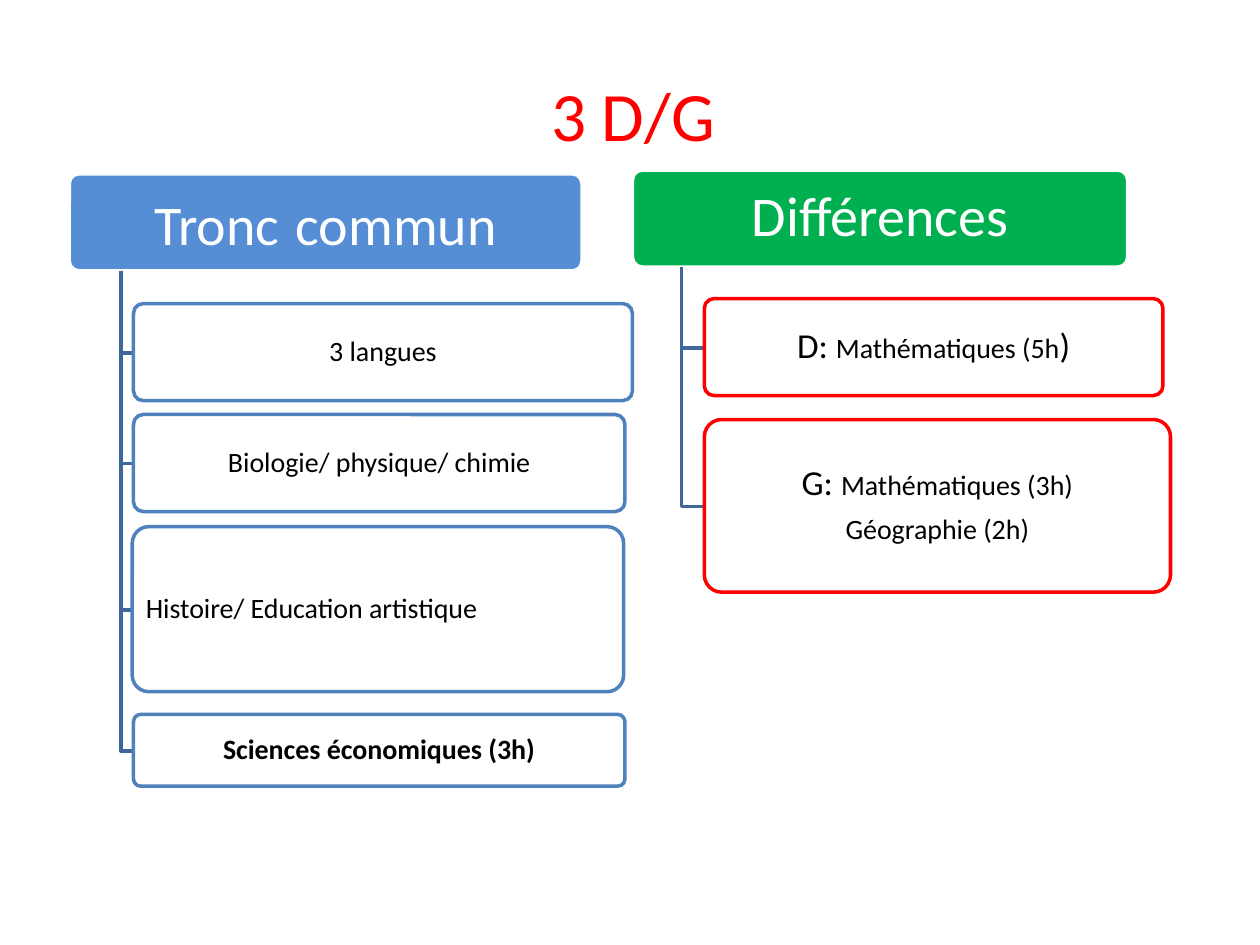
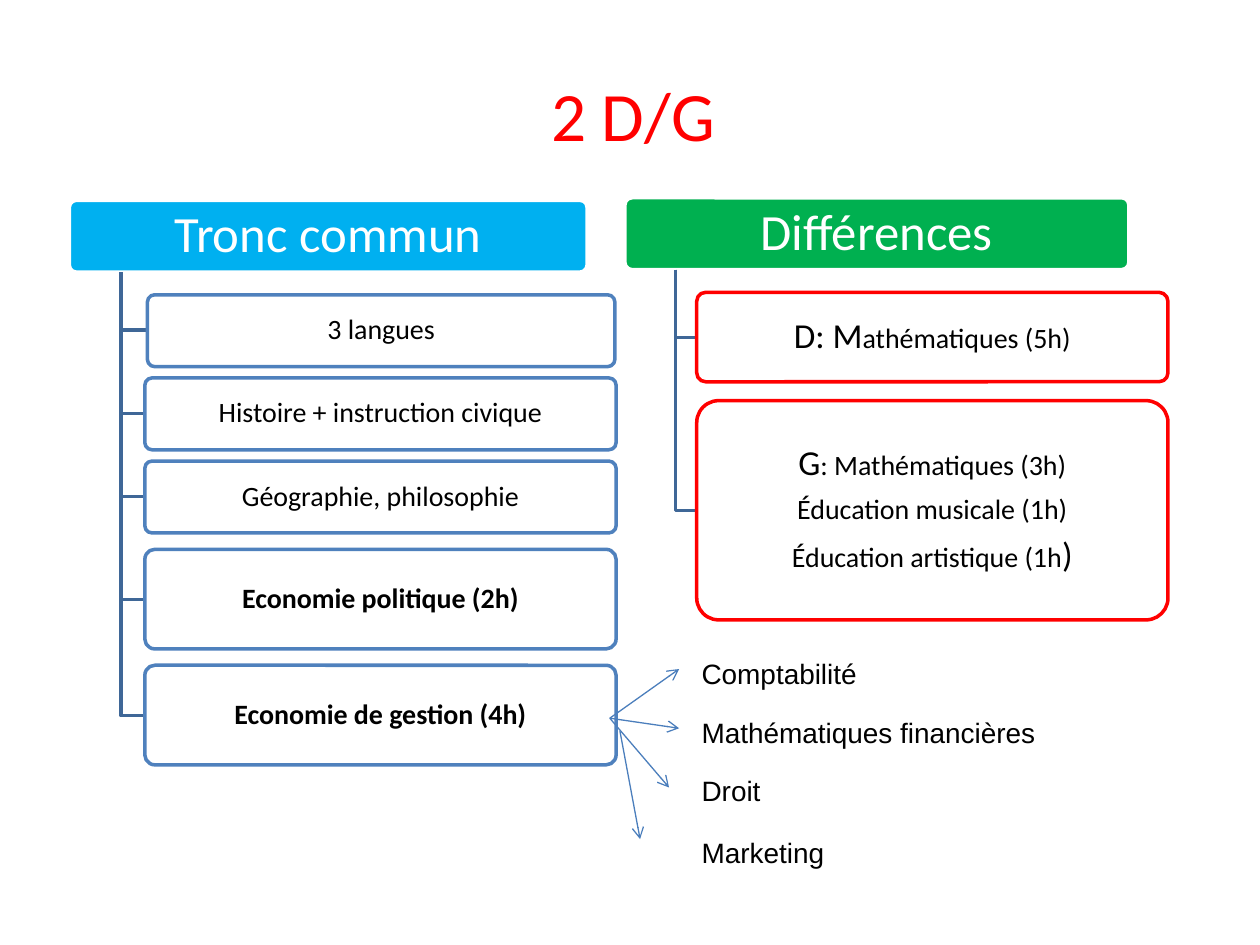
from dataclasses import dataclass
from lxml import etree
from pptx import Presentation
from pptx.dml.color import RGBColor as RGB
from pptx.enum.shapes import MSO_CONNECTOR as CONN, MSO_SHAPE as SHAPE
from pptx.enum.text import MSO_ANCHOR as ANCHOR, PP_ALIGN as ALIGN
from pptx.oxml.ns import qn
from pptx.util import Pt

PX = 9144  # EMU per px, 100 px to the inch


@dataclass(frozen=True)
class Theme:
    red: RGB = RGB(0xFF, 0x00, 0x00)
    green: RGB = RGB(0x00, 0xB0, 0x50)
    blue: RGB = RGB(0x55, 0x8E, 0xD5)
    sky: RGB = RGB(0x00, 0xB0, 0xF0)
    outline: RGB = RGB(0x4F, 0x81, 0xBD)
    branch: RGB = RGB(0x3F, 0x67, 0x97)
    arrow: RGB = RGB(0x4B, 0x7E, 0xBC)
    white: RGB = RGB(0xFF, 0xFF, 0xFF)
    black: RGB = RGB(0x00, 0x00, 0x00)
    font: str = "Calibri"
    label_font: str = "Arial"
    title: float = 39.6
    space: int = 40
    header: int = 32
    small_header: int = 29
    lead: int = 20
    body: int = 16


T = Theme()


def write(shape, paragraphs, color, align=ALIGN.CENTER, font=T.font, insets=(3, 2), spacing=0.9):
    """Fill a shape with paragraphs, each a list of (text, size, bold) runs."""
    tf = shape.text_frame
    tf.word_wrap = True
    tf.vertical_anchor = ANCHOR.MIDDLE
    tf.margin_left = tf.margin_right = insets[0] * PX
    tf.margin_top = tf.margin_bottom = insets[1] * PX
    for i, runs in enumerate(paragraphs):
        p = tf.paragraphs[0] if i == 0 else tf.add_paragraph()
        p.alignment = align
        p.line_spacing = spacing
        if i < len(paragraphs) - 1:
            p.space_after = Pt(7)
        for text, size, bold in runs:
            r = p.add_run()
            r.text = text
            r.font.name = font
            r.font.size = Pt(size)
            r.font.bold = bold
            r.font.color.rgb = color


def add_box(s, rect, fill, line):
    sp = s.shapes.add_shape(SHAPE.ROUNDED_RECTANGLE, *(v * PX for v in rect))
    sp.adjustments[0] = 0.1
    sp.shadow.inherit = False
    sp.fill.solid()
    sp.fill.fore_color.rgb = fill
    sp.line.color.rgb = line
    sp.line.width = Pt(2)
    return sp


# Column: header rect, header fill, header runs, box outline, boxes (rect, paragraphs, alignment)
C, L = ALIGN.CENTER, ALIGN.LEFT
slides = [
    ("3 D/G", [
        ((55, 138, 407, 77), T.blue,
         [("Tronc", T.header, False), (" ", T.space, False), ("commun", T.header, False)],
         T.outline, [
             ((106, 241, 396, 77), [[("3 langues", T.body, False)]], C),
             ((106, 329, 390, 77), [[("Biologie/ physique/ chimie", T.body, False)]], C),
             ((105, 418, 390, 131), [[("Histoire/ Education artistique", T.body, False)]], L),
             ((106, 567, 390, 57), [[("Sciences économiques (3h)", T.body, True)]], C),
         ]),
        ((502, 135, 393, 77), T.green, [("Différences", T.header, False)], T.red, [
            ((559, 237, 364, 77), [[("D: ", T.lead, False), ("Mathématiques (5h", T.body, False),
                                    (")", T.lead, False)]], C),
            ((559, 333, 370, 137), [[("G: ", T.lead, False), ("Mathématiques (3h)", T.body, False)],
                                    [("Géographie (2h)", T.body, False)]], C),
        ]),
    ]),
    ("2 D/G", [
        ((55, 159, 411, 57), T.sky, [("Tronc commun", T.small_header, False)], T.outline, [
            ((117, 234, 371, 57), [[("3 langues", T.body, False)]], C),
            ((115, 300, 374, 57), [[("Histoire + instruction civique", T.body, False)]], C),
            ((115, 366, 374, 57), [[("Géographie, philosophie", T.body, False)]], C),
            ((115, 436, 374, 79), [[("Economie politique (2h)", T.body, True)]], C),
            ((115, 528, 374, 79), [[("Economie de gestion (4h)", T.body, True)]], C),
        ]),
        ((496, 157, 400, 57), T.green, [("Différences", T.small_header, False)], T.red, [
            ((553, 232, 374, 71), [[("D: M", T.lead, False),
                                    ("athématiques (5h)", T.body, False)]], C),
            ((553, 318, 374, 174), [[("G", T.lead, False), (": Mathématiques (3h)", T.body, False)],
                                    [("Éducation musicale (1h)", T.body, False)],
                                    [("Éducation artistique (1h", T.body, False),
                                     (")", T.lead, False)]], C),
        ]),
    ]),
]

# Management subjects: label, label top, arrow start, arrow end
subjects = [
    ("Comptabilité", 516, (484, 570), (539, 531)),
    ("Mathématiques financières", 563, (484, 570), (539, 578)),
    ("Droit", 609, (484, 570), (531, 625)),
    ("Marketing", 658, (492, 580), (508, 666)),
]

prs = Presentation()
prs.slide_width, prs.slide_height = 1000 * PX, 750 * PX

for title, columns in slides:
    s = prs.slides.add_slide(prs.slide_layouts[6])
    tb = s.shapes.add_textbox(55 * PX, 55 * PX, 895 * PX, 70 * PX)
    write(tb, [[(title, T.title, False)]], T.red, insets=(10, 5), spacing=1.0)

    for header_rect, header_fill, header_runs, outline, boxes in columns:
        header = add_box(s, header_rect, header_fill, T.white)
        write(header, [header_runs], T.white, insets=(7, 4))
        left, top, width, height = header_rect
        trunk_x, trunk_y = round(left + width / 10), top + height

        for rect, paragraphs, align in boxes:
            middle = round(rect[1] + rect[3] / 2)
            fb = s.shapes.build_freeform(trunk_x, trunk_y, scale=PX)
            fb.add_line_segments([(trunk_x, middle), (rect[0], middle)], close=False)
            branch = fb.convert_to_shape()
            branch.shadow.inherit = False
            branch.fill.background()
            branch.line.color.rgb = T.branch
            branch.line.width = Pt(2)

            box = add_box(s, rect, T.white, outline)
            color = box.fill._xPr.find(qn("a:solidFill"))[0]
            etree.SubElement(color, qn("a:alpha"), val="90000")
            write(box, paragraphs, T.black, align, insets=(7 if align == L else 3, 2))

# The last slide also splits its final box into subjects
for label, top, start, end in subjects:
    cx = s.shapes.add_connector(CONN.STRAIGHT, *(v * PX for v in start + end))
    cx.line.color.rgb = T.arrow
    cx.line.width = Pt(0.75)
    etree.SubElement(cx.line._get_or_add_ln(), qn("a:tailEnd"), type="arrow")
    etree.SubElement(cx._element.spPr, qn("a:effectLst"))
    tb = s.shapes.add_textbox(547 * PX, top * PX, 406 * PX, 37 * PX)
    write(tb, [[(label, T.body, False)]], T.black, L, T.label_font, (10, 5), 1.0)

prs.save("out.pptx")
